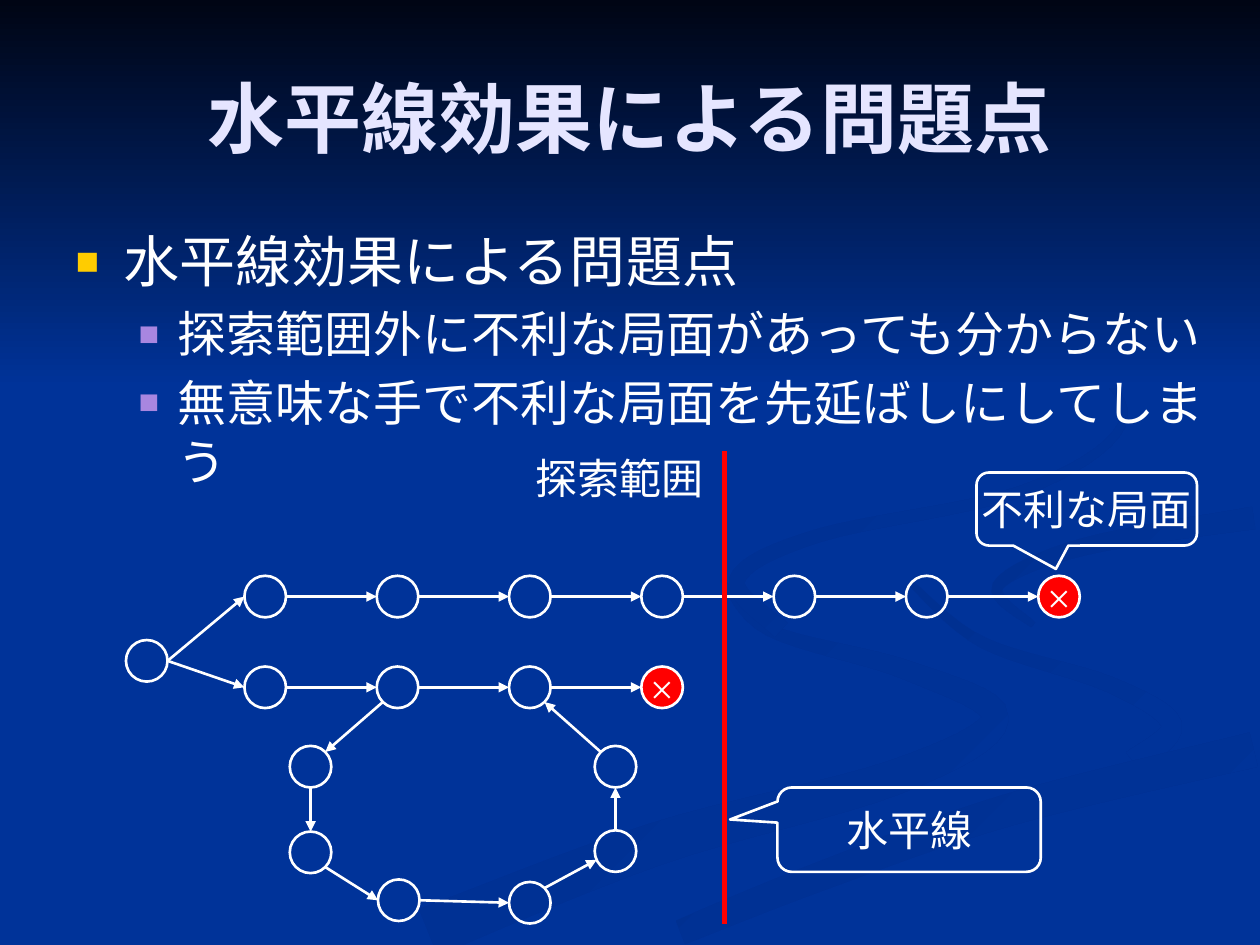
from dataclasses import dataclass
from math import cos, hypot, radians, sin

from lxml import etree
from pptx import Presentation
from pptx.dml.color import RGBColor
from pptx.enum.shapes import MSO_CONNECTOR, MSO_SHAPE
from pptx.enum.text import MSO_ANCHOR, MSO_AUTO_SIZE, PP_ALIGN
from pptx.oxml.ns import qn
from pptx.util import Inches, Pt

STRAIGHT = MSO_CONNECTOR.STRAIGHT
OVAL, RECTANGLE = MSO_SHAPE.OVAL, MSO_SHAPE.RECTANGLE
CALLOUT = MSO_SHAPE.ROUNDED_RECTANGULAR_CALLOUT
CENTER, LEFT = PP_ALIGN.CENTER, PP_ALIGN.LEFT
MIDDLE, TOP = MSO_ANCHOR.MIDDLE, MSO_ANCHOR.TOP
NO_FIT = MSO_AUTO_SIZE.NONE


@dataclass(frozen=True)
class Theme:
    font: str = "Times New Roman"
    background: str = "003399"
    night: str = "000514"
    swirl: str = "003091"
    title: str = "E5E5FF"
    text: str = "FFFFFF"
    alert: str = "FF0000"
    bullets: tuple = ("FFCC00", "A886E0")
    title_size: int = 44
    body_sizes: tuple = (32, 28)
    label_size: int = 24
    line_width: float = 1.5
    horizon_width: float = 3.25


THEME = Theme()
NODE_SIZE = 0.33
CURVE_STEPS = 8

RIBBONS = [
    (0.03, 0.4, [(5.73, 4.6), (6.1, 5), (7.2, 5.32), (7.9, 5.7), (7.1, 6.17), (5.2, 6.7), (3.4, 7.4)]),
    (0.05, 0.2, [(7.24, 4.64), (7.8, 5.1), (8.8, 5.43), (9.3, 5.75), (9, 6.05)]),
    (0.2, 0.28, [(5.4, 7.4), (6.5, 6.96), (8, 6.43), (9.95, 5.95)]),
    (0.05, 0.18, [(8.2, 4.96), (7.92, 4.65), (8.6, 4.34), (9.95, 4.11)]),
    (0.02, 0.15, [(7.62, 2.33), (8.6, 2.85), (8.9, 3.38), (8.1, 3.9), (6.5, 4.25), (5.85, 4.6), (6.2, 5)]),
]


def color(value):
    return RGBColor.from_string(value)


def inches(*values):
    return [Inches(value) for value in values]


def write_text(paragraph, text, *, size, fill=THEME.text, bold=False, align=CENTER, before=None):
    paragraph.alignment = align
    if before is not None:
        paragraph.space_before = Pt(before)
    run = paragraph.add_run()
    run.text = text
    run.font.name = THEME.font
    run.font.size = Pt(size)
    run.font.bold = bold
    run.font.color.rgb = color(fill)


def write_label(shape, text):
    frame = shape.text_frame
    frame.word_wrap = False
    frame.vertical_anchor = MIDDLE
    write_text(frame.paragraphs[0], text, size=THEME.label_size, before=THEME.label_size * 0.2)


def add_outlined(slide, kind, box, text="", fill=None):
    shape = slide.shapes.add_shape(kind, *inches(*box))
    shape.shadow.inherit = False
    if fill:
        shape.fill.solid()
        shape.fill.fore_color.rgb = color(fill)
    else:
        shape.fill.background()
    shape.line.color.rgb = color(THEME.text)
    shape.line.width = Pt(THEME.line_width)
    if text:
        write_label(shape, text)
    return shape


def add_line(slide, start, end, stroke=THEME.text, width=THEME.line_width, arrow=True):
    connector = slide.shapes.add_connector(STRAIGHT, *inches(*start, *end))
    connector.line.color.rgb = color(stroke)
    connector.line.width = Pt(width)
    if arrow:
        etree.SubElement(connector.line._get_or_add_ln(), qn("a:tailEnd"), type="triangle")
    etree.SubElement(connector._element.spPr, qn("a:effectLst"))


def fill_gradient(shape, first, last, angle):
    shape.shadow.inherit = False
    shape.line.fill.background()
    shape.fill.gradient()
    shape.fill.gradient_angle = -angle % 360
    for stop, value in zip(shape.fill.gradient_stops, (first, last)):
        stop.color.rgb = color(value)


def smooth(points):
    padded = [points[0], *points, points[-1]]
    curve = []
    for a, b, c, d in zip(padded, padded[1:], padded[2:], padded[3:]):
        for step in range(CURVE_STEPS):
            t = step / CURVE_STEPS
            curve.append(tuple(
                q + t * (r - p) / 2 + t ** 2 * (2 * p - 5 * q + 4 * r - s) / 2
                + t ** 3 * (3 * q - p - 3 * r + s) / 2
                for p, q, r, s in zip(a, b, c, d)))
    return [*curve, points[-1]]


def ribbon_outline(points, start_width, end_width):
    curve = smooth(points)
    last = len(curve) - 1
    near, far = [], []
    for index, (x, y) in enumerate(curve):
        before, after = curve[max(index - 1, 0)], curve[min(index + 1, last)]
        run, rise = after[0] - before[0], after[1] - before[1]
        half = (start_width + (end_width - start_width) * index / last) / 2 / hypot(run, rise)
        near.append((x - rise * half, y + run * half))
        far.append((x + rise * half, y - run * half))
    return near + far[::-1]


def add_backdrop(slide, left, top, width, height):
    slide.background.fill.solid()
    slide.background.fill.fore_color.rgb = color(THEME.background)
    for start_width, end_width, points in RIBBONS:
        outline = ribbon_outline(points, start_width, end_width)
        corners = [inches(left + x, top + y) for x, y in outline]
        builder = slide.shapes.build_freeform(*corners[0])
        builder.add_line_segments(corners[1:], close=True)
        fill_gradient(builder.convert_to_shape(), THEME.swirl, THEME.background, 45)
    sky = slide.shapes.add_shape(RECTANGLE, *inches(left, top, width, height))
    fill_gradient(sky, THEME.night, THEME.background, 90)


def place(slide, placeholder, box, anchor):
    placeholder.left, placeholder.top, placeholder.width, placeholder.height = inches(*box)
    slide.shapes._spTree.append(placeholder._element)
    frame = placeholder.text_frame
    frame.auto_size = NO_FIT
    frame.word_wrap = True
    frame.vertical_anchor = anchor
    return frame


def add_title(slide, box, text):
    frame = place(slide, slide.shapes.title, box, MIDDLE)
    write_text(frame.paragraphs[0], text, size=THEME.title_size, fill=THEME.title, bold=True)


def add_bullets(slide, box, items):
    frame = place(slide, slide.placeholders[1], box, TOP)
    for index, (level, text) in enumerate(items):
        paragraph = frame.add_paragraph() if index else frame.paragraphs[0]
        paragraph.level = level
        write_text(paragraph, text, size=THEME.body_sizes[level], align=LEFT)
        properties = paragraph._p.get_or_add_pPr()
        margin, indent = [(0.38, -0.38), (0.81, -0.31)][level]
        properties.set("marL", str(Inches(margin)))
        properties.set("indent", str(Inches(indent)))
        bullet_color = etree.SubElement(properties, qn("a:buClr"))
        etree.SubElement(bullet_color, qn("a:srgbClr"), val=THEME.bullets[level])
        etree.SubElement(properties, qn("a:buSzPct"), val="70000")
        etree.SubElement(properties, qn("a:buFont"), typeface="Arial")
        etree.SubElement(properties, qn("a:buChar"), char="■")


def add_search_tree(slide, left, top):
    columns = [0.94 + 1.05 * i for i in range(7)]
    nodes = {"root": (0, 0.51)}
    nodes.update({f"upper{i}": (x, 0) for i, x in enumerate(columns)})
    nodes.update({f"lower{i}": (x, 0.72) for i, x in enumerate(columns[:4])})
    loop = [(1.3, 1.35), (1.3, 2.03), (2, 2.41), (3.04, 2.43), (3.72, 2.02), (3.72, 1.35)]
    nodes.update({f"loop{i}": position for i, position in enumerate(loop)})
    for name, (x, y) in nodes.items():
        lost = name in ("upper6", "lower3")
        add_outlined(slide, OVAL, (left + x, top + y, NODE_SIZE, NODE_SIZE),
                     text="×" if lost else "", fill=THEME.alert if lost else None)

    def rim(name, angle):
        x, y = nodes[name]
        radius = NODE_SIZE / 2
        return (left + x + radius * (1 + cos(radians(angle))),
                top + y + radius * (1 + sin(radians(angle))))

    edges = [("root", 0, "upper0", 180), ("root", 0, "lower0", 180)]
    for row, count in (("upper", 6), ("lower", 3)):
        edges += [(f"{row}{i}", 0, f"{row}{i + 1}", 180) for i in range(count)]
    edges += [
        ("lower1", 135, "loop0", -45), ("loop0", 90, "loop1", -90),
        ("loop1", 45, "loop2", 180), ("loop2", 0, "loop3", 180),
        ("loop3", -45, "loop4", 155), ("loop4", -90, "loop5", 90),
        ("loop5", -135, "lower2", 45),
    ]
    for source, leaving, target, arriving in edges:
        add_line(slide, rim(source, leaving), rim(target, arriving))


def add_callout(slide, box, text, pointer):
    callout = add_outlined(slide, CALLOUT, box, text)
    for index, value in enumerate((*pointer, 0.17)):
        callout.adjustments[index] = value


def add_horizon(slide, left, top, height):
    add_line(slide, (left, top), (left, top + height), stroke=THEME.alert,
             width=THEME.horizon_width, arrow=False)
    label = slide.shapes.add_textbox(*inches(left - 1.61, top - 0.04, 1.55, 0.5))
    write_label(label, "探索範囲")
    add_callout(slide, (left + 0.42, top + 2.67, 2.09, 0.67), "水平線", (-0.68, -0.12))


def main():
    presentation = Presentation()
    presentation.slide_width, presentation.slide_height = inches(10, 7.5)
    slide = presentation.slides.add_slide(presentation.slide_layouts[1])
    add_backdrop(slide, 0, 0, 10, 3.08)
    add_title(slide, (0.5, 0.3, 9, 1.25), "水平線効果による問題点")
    add_bullets(slide, (0.5, 1.75, 9.33, 4.95), [
        (0, "水平線効果による問題点"),
        (1, "探索範囲外に不利な局面があっても分からない"),
        (1, "無意味な手で不利な局面を先延ばしにしてしまう"),
    ])
    add_search_tree(slide, 1, 4.57)
    add_callout(slide, (7.75, 3.75, 1.75, 0.58), "不利な局面", (-0.14, 0.82))
    add_horizon(slide, 5.75, 3.58, 3.75)
    presentation.save("out.pptx")


if __name__ == "__main__":
    main()
